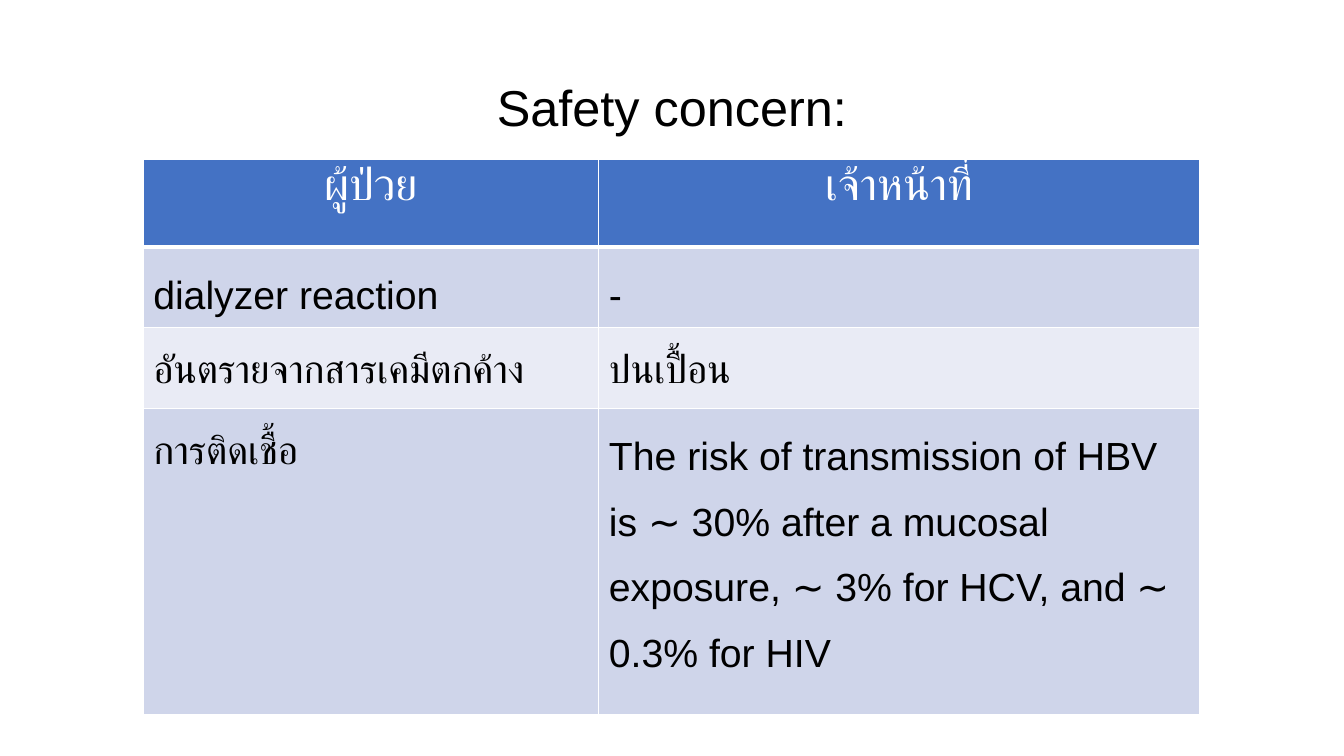
"""Build the safety concern slide with its two-column table."""
from lxml.etree import SubElement
from pptx import Presentation
from pptx.dml.color import RGBColor
from pptx.enum.text import MSO_ANCHOR, MSO_AUTO_SIZE, PP_ALIGN
from pptx.oxml.ns import qn
from pptx.util import Inches, Pt


def paint(fill, color):
    fill.solid()
    fill.fore_color.rgb = RGBColor.from_string(color)


def write(frame, text, size, color, align, space):
    para = frame.paragraphs[0]
    para.alignment, para.line_spacing = align, space
    run = para.add_run()
    run.text = text
    for name, value in {"name": "Arial", "size": Pt(size), "bold": False}.items():
        setattr(run.font, name, value)
    paint(run.font.fill, color)


deck = Presentation()
deck.slide_width, deck.slide_height = Inches(13.33), Inches(7.5)
slide = deck.slides.add_slide(deck.slide_layouts[5])

title = slide.shapes.title
place = {"left": 0, "top": 0.4, "width": 13.33, "height": 0.93}
for name, value in place.items():
    setattr(title, name, Inches(value))
frame = title.text_frame
look = {"word_wrap": True, "vertical_anchor": MSO_ANCHOR.TOP,
        "auto_size": MSO_AUTO_SIZE.SHAPE_TO_FIT_TEXT}
for name, value in look.items():
    setattr(frame, name, value)
write(frame, "Safety concern:", 36, "000000", PP_ALIGN.CENTER, 1.5)

rows = [
    ("ผู้ป่วย", "เจ้าหน้าที่"),
    ("dialyzer reaction", "-"),
    ("อันตรายจากสารเคมีตกค้าง", "ปนเปื้อน"),
    ("การติดเชื้อ", "The risk of transmission of HBV is ∼ 30% after a mucosal "
     "exposure, ∼ 3% for HCV, and ∼ 0.3% for HIV"),
]
widths = [4.52, 5.96]
heights = [0.87, 0.79, 0.8, 3.04]
table = slide.shapes.add_table(
    len(rows), len(widths), Inches(1.42), Inches(1.58),
    Inches(sum(widths)), Inches(sum(heights))).table
for col, width in zip(table.columns, widths):
    col.width = Inches(width)
for row, height in zip(table.rows, heights):
    row.height = Inches(height)

for i, texts in enumerate(rows):
    head = i == 0
    shade = "4472C4" if head else ("E9EBF5", "CFD5EA")[i % 2]
    style = (32, "FFFFFF", PP_ALIGN.CENTER, 1.0) if head else (
        28, "000000", PP_ALIGN.LEFT, 1.5)
    edges = {"L": 1, "R": 1, "T": 3 if i == 1 else 1, "B": 3 if head else 1}
    for j, text in enumerate(texts):
        cell = table.cell(i, j)
        write(cell.text_frame, text, *style)
        props = cell._tc.get_or_add_tcPr()
        for side, width in edges.items():
            line = SubElement(props, qn(f"a:ln{side}"), w=str(Pt(width)))
            solid = SubElement(line, qn("a:solidFill"))
            SubElement(solid, qn("a:srgbClr"), val="FFFFFF")
        paint(cell.fill, shade)

deck.save("out.pptx")
